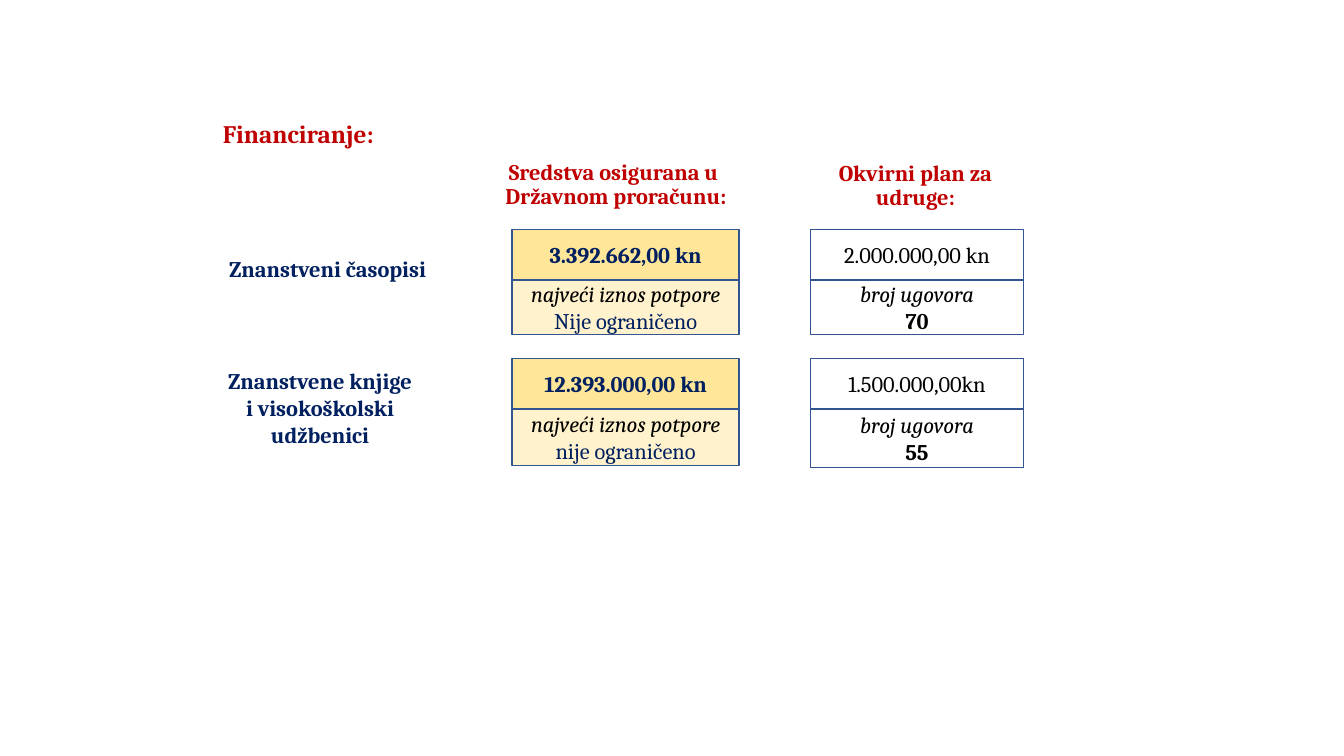
from pptx import Presentation
from pptx.dml.color import RGBColor
from pptx.enum.shapes import MSO_SHAPE
from pptx.enum.text import MSO_ANCHOR, PP_ALIGN
from pptx.util import Inches, Pt

RECTANGLE, ROUNDED = MSO_SHAPE.RECTANGLE, MSO_SHAPE.ROUNDED_RECTANGLE
LEFT, CENTER = PP_ALIGN.LEFT, PP_ALIGN.CENTER
MIDDLE = MSO_ANCHOR.MIDDLE

COLORS = {"red": "C00000", "navy": "002060", "black": "000000",
          "border": "325491", "gold": "FFE699", "cream": "FFF2CC"}

RED_BOLD = {"color": "red", "bold": True}
NAVY_BOLD = {"color": "navy", "bold": True}
NAVY = {"color": "navy"}
BLACK = {"color": "black"}
BLACK_BOLD = {"color": "black", "bold": True}
BLACK_ITALIC = {"color": "black", "italic": True}

HEADINGS = [
    ("Financiranje:", (2.13, 1.14, 8.93, 0.4), LEFT, 18),
    ("Sredstva osigurana u \nDržavnom proračunu:", (4.88, 1.54, 2.46, 0.6), CENTER, 16),
    ("Okvirni plan za udruge:", (8.01, 1.54, 2.14, 0.62), CENTER, 16),
]

LABELS = [
    ("Znanstveni časopisi", (1.95, 2.26, 2.6, 0.5)),
    ("Znanstvene knjige i visokoškolski udžbenici", (2.13, 3.64, 2.09, 0.5)),
]

COLUMNS = [
    {"left": 5.08, "width": 2.25, "fills": ("gold", "cream"),
     "amount": NAVY_BOLD, "caption": "najveći iznos potpore", "detail": NAVY,
     "cells": [("3.392.662,00 kn", "Nije ograničeno", 0.54),
               ("12.393.000,00 kn", "nije ograničeno", 0.56)]},
    {"left": 8.04, "width": 2.11, "fills": (None, None),
     "amount": BLACK, "caption": "broj ugovora", "detail": BLACK_BOLD,
     "cells": [("2.000.000,00 kn", "70", 0.54),
               ("1.500.000,00kn", "55", 0.58)]},
]

FIRST_ROW, ROW_STEP, AMOUNT_HEIGHT = 2.28, 1.28, 0.5


def write(frame, lines, align=CENTER, size=16, spacing=None, **margins):
    frame.word_wrap = True
    frame.vertical_anchor = MIDDLE
    for side, inset in margins.items():
        setattr(frame, side, Inches(inset))
    for index, (text, style) in enumerate(lines):
        paragraph = frame.add_paragraph() if index else frame.paragraphs[0]
        paragraph.alignment = align
        paragraph.line_spacing = spacing
        for part_index, part in enumerate(text.split("\n")):
            if part_index:
                paragraph.add_line_break()
            run = paragraph.add_run()
            run.text = part
            formats = {"name": "Cambria", "size": Pt(size),
                       "bold": style.get("bold", False),
                       "italic": style.get("italic", False)}
            for attribute, value in formats.items():
                setattr(run.font, attribute, value)
            run.font.color.rgb = RGBColor.from_string(COLORS[style["color"]])


def add_box(slide, kind, place, lines, fill=None, border=None, **margins):
    box = slide.shapes.add_shape(kind, *map(Inches, place))
    box.shadow.inherit = False
    if fill:
        box.fill.solid()
        box.fill.fore_color.rgb = RGBColor.from_string(COLORS[fill])
    else:
        box.fill.background()
    if border:
        box.line.color.rgb = RGBColor.from_string(COLORS[border])
        box.line.width = Pt(1)
    else:
        box.line.fill.background()
    write(box.text_frame, lines, **margins)


def main():
    presentation = Presentation()
    presentation.slide_width = Inches(13.33)
    presentation.slide_height = Inches(7.5)
    slide = presentation.slides.add_slide(presentation.slide_layouts[6])

    for text, place, align, size in HEADINGS:
        heading = slide.shapes.add_textbox(*map(Inches, place))
        write(heading.text_frame, [(text, RED_BOLD)], align, size, 0.9,
              margin_left=0.08, margin_right=0.08,
              margin_top=0.08, margin_bottom=0.08)

    for text, place in LABELS:
        add_box(slide, ROUNDED, place, [(text, NAVY_BOLD)],
                margin_top=0.35, margin_bottom=0.05)

    for column in COLUMNS:
        left, width = column["left"], column["width"]
        amount_fill, detail_fill = column["fills"]
        for row, (amount, detail, detail_height) in enumerate(column["cells"]):
            top = FIRST_ROW + row * ROW_STEP
            add_box(slide, RECTANGLE, (left, top, width, AMOUNT_HEIGHT),
                    [(amount, column["amount"])], amount_fill, "border")
            add_box(slide, RECTANGLE,
                    (left, top + AMOUNT_HEIGHT, width, detail_height),
                    [(column["caption"], BLACK_ITALIC), (detail, column["detail"])],
                    detail_fill, "border")

    presentation.save("out.pptx")


if __name__ == "__main__":
    main()
